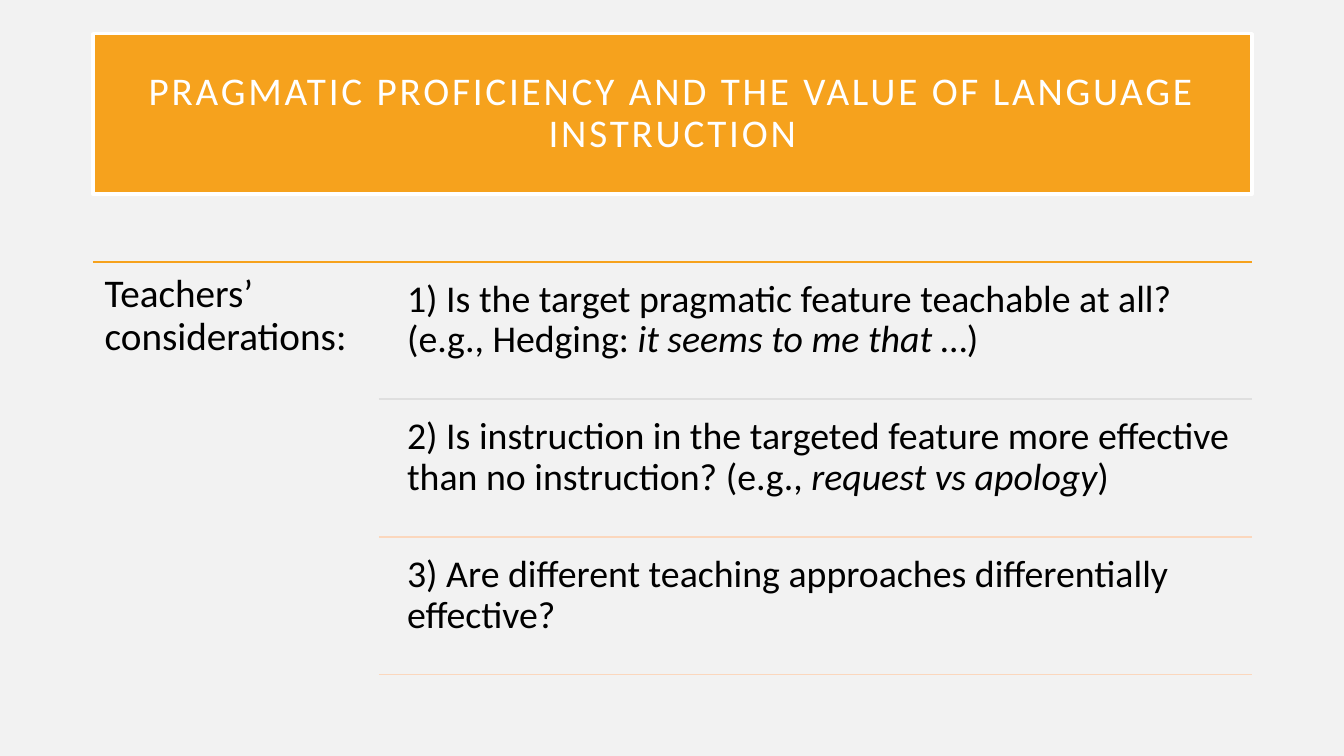
from dataclasses import dataclass

from lxml.etree import SubElement
from pptx import Presentation
from pptx.dml.color import RGBColor
from pptx.enum.shapes import MSO_CONNECTOR
from pptx.enum.text import MSO_ANCHOR, MSO_AUTO_SIZE, PP_ALIGN
from pptx.oxml.ns import qn
from pptx.util import Cm, Pt


@dataclass(frozen=True)
class Theme:
    font: str = "Calibri"
    background: RGBColor = RGBColor(0xF2, 0xF2, 0xF2)
    accent: RGBColor = RGBColor(0xF6, 0xA2, 0x1D)
    white: RGBColor = RGBColor(0xFF, 0xFF, 0xFF)
    ink: RGBColor = RGBColor(0x00, 0x00, 0x00)
    gray_rule: RGBColor = RGBColor(0xDF, 0xDF, 0xDF)
    peach_rule: RGBColor = RGBColor(0xFB, 0xD7, 0xBD)
    heading_size: Pt = Pt(28)
    question_size: Pt = Pt(27)
    rule_width: Pt = Pt(1)
    border_width: Pt = Pt(2.5)
    letter_spacing: str = "200"


THEME = Theme()
LEFT, RIGHT = 2.34, 31.55
TOP_RULE = 6.6
RULE_LEFT, QUESTION_LEFT = 9.55, 9.98
QUESTION_TOP, QUESTION_HEIGHT, QUESTION_STEP = 6.76, 3.3, 3.47

TITLE = "PRAGMATIC PROFICIENCY AND THE VALUE OF LANGUAGE INSTRUCTION"
QUESTIONS = [
    ([("1) Is the target pragmatic feature teachable at all? (e.g., Hedging: ", False),
      ("it seems to me that ", True), ("…)", False)], THEME.gray_rule),
    ([("2) Is instruction in the targeted feature more eﬀective than no instruction? (e.g., ", False),
      ("request vs apology", True), (")", False)], THEME.peach_rule),
    ([("3) Are diﬀerent teaching approaches diﬀerentially eﬀective?", False)],
     THEME.peach_rule),
]


def apply_format(target, values):
    for name, value in values.items():
        setattr(target, name, value)


def place(shape, left, top, width, height):
    apply_format(shape, {"left": Cm(left), "top": Cm(top),
                         "width": Cm(width), "height": Cm(height)})


def write_text(shape, spans, size, color, inset, anchor=MSO_ANCHOR.TOP, align=PP_ALIGN.LEFT):
    frame = shape.text_frame
    apply_format(frame, {"word_wrap": True, "auto_size": MSO_AUTO_SIZE.NONE,
                         "vertical_anchor": anchor})
    sides = ("left", "top", "right", "bottom")
    apply_format(frame, {f"margin_{side}": Cm(inset) for side in sides})
    para = frame.paragraphs[0]
    apply_format(para, {"alignment": align, "line_spacing": 0.9})
    for text, italic in spans:
        span = para.add_run()
        span.text = text
        apply_format(span.font, {"name": THEME.font, "size": size, "italic": italic})
        span.font.color.rgb = color
    return para


def format_title(page):
    title = page.shapes.title
    place(title, LEFT, 0.85, RIGHT - LEFT, 4.04)
    title.fill.solid()
    title.fill.fore_color.rgb = THEME.accent
    title.line.color.rgb = THEME.white
    title.line.width = THEME.border_width
    para = write_text(title, [(TITLE, False)], THEME.heading_size, THEME.white, 0.5,
                      MSO_ANCHOR.MIDDLE, PP_ALIGN.CENTER)
    for span in para.runs:
        span._r.get_or_add_rPr().set("spc", THEME.letter_spacing)


def add_rule(page, left, top, color):
    rule = page.shapes.add_connector(MSO_CONNECTOR.STRAIGHT, Cm(left), Cm(top),
                                     Cm(RIGHT), Cm(top))
    rule.line.color.rgb = color
    rule.line.width = THEME.rule_width
    SubElement(rule._element.spPr, qn("a:effectLst"))


def add_text(page, left, top, width, height, spans, size, inset):
    box = page.shapes.add_textbox(Cm(left), Cm(top), Cm(width), Cm(height))
    write_text(box, spans, size, THEME.ink, inset)


def add_questions(page):
    for index, (spans, color) in enumerate(QUESTIONS):
        top = QUESTION_TOP + index * QUESTION_STEP
        add_text(page, QUESTION_LEFT, top, RIGHT - QUESTION_LEFT, QUESTION_HEIGHT,
                 spans, THEME.question_size, 0.28)
        add_rule(page, RULE_LEFT, top + QUESTION_HEIGHT, color)


def main():
    deck = Presentation()
    apply_format(deck, {"slide_width": Cm(33.87), "slide_height": Cm(19.05)})
    page = deck.slides.add_slide(deck.slide_layouts[5])
    page.background.fill.solid()
    page.background.fill.fore_color.rgb = THEME.background
    format_title(page)
    add_rule(page, LEFT, TOP_RULE, THEME.accent)
    add_text(page, LEFT, TOP_RULE, 7.24, 10.57, [("Teachers’ considerations:", False)],
             THEME.heading_size, 0.3)
    add_questions(page)
    deck.save("out.pptx")


if __name__ == "__main__":
    main()
